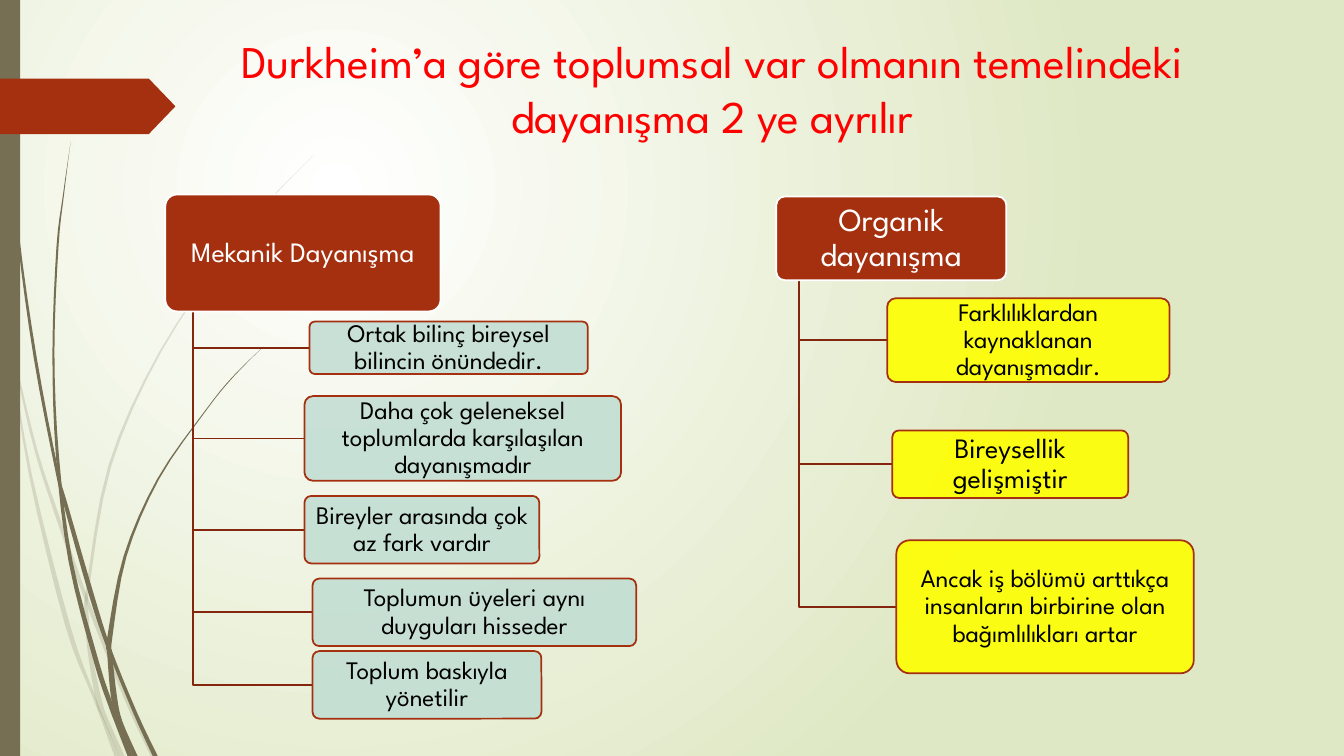
"""Slide on Durkheim's two kinds of social solidarity, drawn as two hierarchies."""
from dataclasses import dataclass

from lxml import etree
from pptx import Presentation
from pptx.dml.color import RGBColor
from pptx.enum.shapes import MSO_SHAPE as Preset
from pptx.enum.text import MSO_ANCHOR as Anchor, MSO_AUTO_SIZE as AutoSize, PP_ALIGN as Align
from pptx.oxml.ns import qn
from pptx.util import Inches, Pt


@dataclass(frozen=True)
class Theme:
    font: str = "League Spartan"
    title: str = "FF0000"
    glow: str = "FFFFFF"
    edge: str = "DFE8C4"
    olive: str = "766F54"
    rust: str = "A53010"
    branch: str = "84260D"
    sage: str = "C3DED3"
    yellow: str = "FFFF00"
    black: str = "000000"
    white: str = "FFFFFF"
    title_size: float = 32.4
    organic_size: int = 23
    large_size: int = 20
    leaf_size: int = 18
    line: float = 1.25


theme = Theme()


def dress(shape, fill=None, line=None, opacity=100):
    shape.shadow.inherit = False
    if fill:
        shape.fill.solid()
        shape.fill.fore_color.rgb = RGBColor.from_string(fill)
        if opacity < 100:
            tint = shape.element.spPr.find(qn("a:solidFill"))[0]
            etree.SubElement(tint, qn("a:alpha"), val=str(opacity * 1000))
    else:
        shape.fill.background()
    if line:
        shape.line.color.rgb = RGBColor.from_string(line)
        shape.line.width = Pt(theme.line)
    else:
        shape.line.fill.background()


def add_outline(points, close):
    corners = [(Inches(x), Inches(y)) for x, y in points]
    outline = slide.shapes.build_freeform(*corners[0])
    outline.add_line_segments(corners[1:], close=close)
    return outline.convert_to_shape()


deck = Presentation()
deck.slide_width, deck.slide_height = Inches(13.33), Inches(7.5)
slide = deck.slides.add_slide(deck.slide_layouts[5])

backdrop = slide.background.fill
backdrop.gradient()
for stop, color in zip(backdrop.gradient_stops, (theme.glow, theme.edge)):
    stop.color.rgb = RGBColor.from_string(color)
gradient = next(slide.element.iter(qn("a:gradFill")))
gradient.remove(gradient.find(qn("a:lin")))
radial = etree.SubElement(gradient, qn("a:path"), {"path": "circle"})
etree.SubElement(radial, qn("a:fillToRect"), l="50000", t="50000", r="100000", b="100000")

stems = [
    (20, [(0, 2.9, 0.04), (0.1, 3.44, 0.02), (0.16, 3.65, 0.02), (0.36, 4.48, 0.03),
          (0.6, 5.21, 0.04), (0.86, 5.95, 0.04), (1.25, 6.93, 0.04), (1.52, 7.5, 0.05)]),
    (20, [(0.11, 3.5, 0), (0.3, 4.7, 0.03), (0.67, 6.2, 0.05), (0.92, 6.88, 0.03),
          (1.02, 7.14, 0.03), (1.16, 7.5, 0.05)]),
    (20, [(3.12, 1.53, 0), (2.68, 1.98, 0.01), (2.29, 2.45, 0.01), (1.59, 3.49, 0.02),
          (1.09, 4.62, 0.03), (0.87, 5.84, 0.03), (0.86, 6.1, 0.04), (0.89, 6.46, 0.04),
          (0.98, 6.95, 0.06), (1.05, 7.14, 0.05), (1.21, 7.5, 0.05)]),
    (100, [(0.04, 0, 0.01), (0.05, 0.48, 0.01), (0.08, 1.1, 0.01), (0.18, 2.33, 0.02),
           (0.35, 3.55, 0.03), (0.56, 4.65, 0.03), (0.65, 5, 0.04), (0.91, 5.91, 0.05),
           (1.08, 6.43, 0.04), (1.34, 7.07, 0.04), (1.54, 7.5, 0.05)]),
    (100, [(0.7, 1.41, 0), (0.63, 1.93, 0.01), (0.57, 2.45, 0.02), (0.53, 3.49, 0.02),
           (0.57, 4.53, 0.03), (0.7, 5.57, 0.04), (0.96, 6.58, 0.05), (1.1, 7, 0.05),
           (1.17, 7.2, 0.04), (1.29, 7.5, 0.05)]),
    (100, [(2.61, 3.44, 0), (2.31, 3.74, 0.01), (2.05, 4.06, 0.01), (1.57, 4.75, 0.02),
           (1.24, 5.52, 0.03), (1.09, 6.32, 0.05), (1.09, 6.5, 0.05), (1.13, 6.91, 0.06),
           (1.19, 7.16, 0.05), (1.34, 7.5, 0.05)]),
]
for opacity, stations in stems:
    padded = [stations[0], *stations, stations[-1]]
    spine = [
        [b + 0.5 * t * (c - a + t * (2 * a - 5 * b + 4 * c - d + t * (3 * (b - c) + d - a)))
         for a, b, c, d in zip(*span)]
        for span in zip(padded, padded[1:], padded[2:], padded[3:])
        for t in (0, 0.25, 0.5, 0.75)
    ] + [stations[-1]]
    rim = [(x - w / 2, y) for x, y, w in spine] + [(x + w / 2, y) for x, y, w in reversed(spine)]
    dress(add_outline(rim, close=True), theme.olive, opacity=opacity)

side_bar = slide.shapes.add_shape(Preset.RECTANGLE, 0, 0, Inches(0.2), Inches(7.5))
dress(side_bar, theme.olive)
banner = slide.shapes.add_shape(Preset.PENTAGON, 0, Inches(0.78), Inches(1.74), Inches(0.55))
banner.adjustments[0] = 0.48
dress(banner, theme.rust)

heading = slide.shapes.title
heading.left, heading.top = Inches(2.19), Inches(0.28)
heading.width, heading.height = Inches(9.75), Inches(1.4)
heading.text_frame.text = "Durkheim’a göre toplumsal var olmanın temelindeki dayanışma 2 ye ayrılır"
heading.text_frame.word_wrap = True
heading.text_frame.auto_size = AutoSize.NONE
heading.text_frame.vertical_anchor = Anchor.TOP
headline = heading.text_frame.paragraphs[0]
headline.alignment = Align.CENTER
headline.font.name = theme.font
headline.font.size = Pt(theme.title_size)
headline.font.color.rgb = RGBColor.from_string(theme.title)

solidarities = [
    ((1.64, 1.93, 2.73, 1.16), "Mekanik Dayanışma", theme.large_size, theme.sage, [
        ((3.07, 3.19, 2.76, 0.52), "Ortak bilinç bireysel bilincin önündedir.", theme.leaf_size),
        ((3.02, 3.93, 3.14, 0.84), "Daha çok geleneksel toplumlarda karşılaşılan dayanışmadır",
         theme.leaf_size),
        ((3.02, 4.92, 2.33, 0.67), "Bireyler arasında çok az fark vardır", theme.leaf_size),
        ((3.1, 5.74, 3.21, 0.67), "Toplumun üyeleri aynı duyguları hisseder", theme.leaf_size),
        ((3.1, 6.46, 2.27, 0.67), "Toplum baskıyla yönetilir", theme.leaf_size),
    ]),
    ((7.7, 1.95, 2.28, 0.83), "Organik dayanışma", theme.organic_size, theme.yellow, [
        ((8.8, 2.96, 2.8, 0.83), "Farklılıklardan kaynaklanan dayanışmadır.", theme.leaf_size),
        ((8.85, 4.27, 2.34, 0.67), "Bireysellik gelişmiştir", theme.large_size),
        ((8.89, 5.36, 2.95, 1.32),
         "Ancak iş bölümü arttıkça insanların birbirine olan bağımlılıkları artar", theme.leaf_size),
    ]),
]
nodes = []
for root, kind, kind_size, leaf_fill, traits in solidarities:
    nodes.append((root, kind, kind_size, theme.white, theme.rust, theme.white, 100))
    trunk = root[0] + root[2] / 10
    base = root[1] + root[3]
    for place, trait, size in traits:
        middle = place[1] + place[3] / 2
        elbow = add_outline([(trunk, base), (trunk, middle), (place[0], middle)], close=False)
        dress(elbow, line=theme.branch)
        nodes.append((place, trait, size, theme.black, leaf_fill, theme.rust, 90))

for place, text, size, ink, fill, line, opacity in nodes:
    node = slide.shapes.add_shape(Preset.ROUNDED_RECTANGLE, *map(Inches, place))
    node.adjustments[0] = 0.1
    dress(node, fill, line, opacity)
    frame = node.text_frame
    frame.word_wrap = True
    frame.vertical_anchor = Anchor.MIDDLE
    frame.margin_left = frame.margin_right = Inches(0.04)
    frame.margin_top = frame.margin_bottom = Inches(0.03)
    frame.text = text
    words = frame.paragraphs[0]
    words.alignment = Align.CENTER
    words.line_spacing = 0.9
    words.font.name = theme.font
    words.font.size = Pt(size)
    words.font.color.rgb = RGBColor.from_string(ink)

deck.save("out.pptx")
